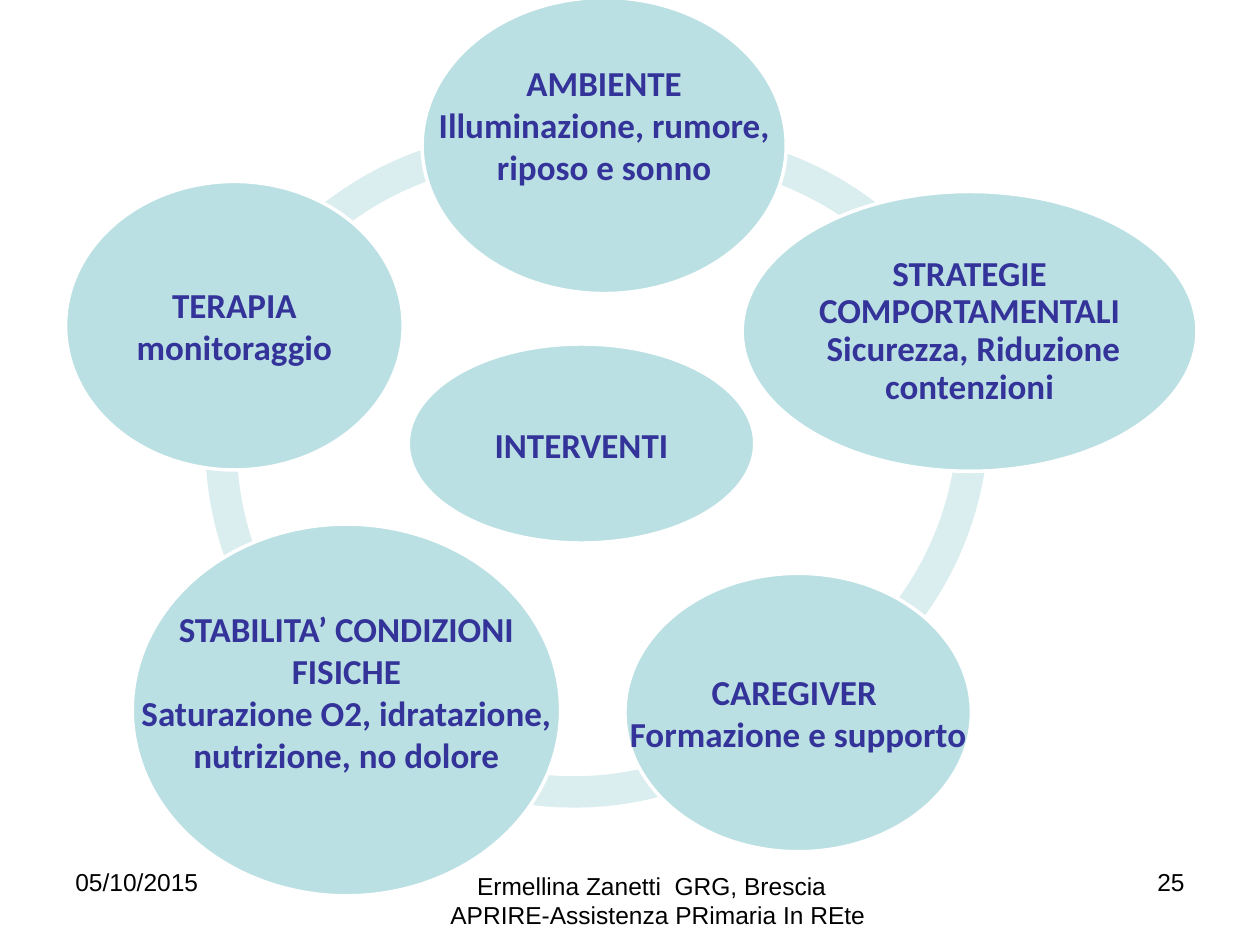
from pptx import Presentation
from pptx.dml.color import RGBColor
from pptx.enum.shapes import MSO_SHAPE
from pptx.enum.text import MSO_ANCHOR, PP_ALIGN
from pptx.util import Inches, Pt

ELLIPSE, BLOCK_ARC = MSO_SHAPE.OVAL, MSO_SHAPE.BLOCK_ARC
LEFT, CENTER, RIGHT = PP_ALIGN.LEFT, PP_ALIGN.CENTER, PP_ALIGN.RIGHT
TOP, MIDDLE = MSO_ANCHOR.TOP, MSO_ANCHOR.MIDDLE

TEAL = RGBColor(0xBB, 0xE0, 0xE3)
PALE_TEAL = RGBColor(0xDA, 0xED, 0xEF)
INDIGO = RGBColor(0x33, 0x33, 0x99)
WHITE = RGBColor(0xFF, 0xFF, 0xFF)
BLACK = RGBColor(0x00, 0x00, 0x00)

RING_SIZE = 5.41
RING_THICKNESS = 0.046
INSET = 0.03

# left, top, start and end angle in degrees, clockwise from the right
RING_ARCS = [
    (1.53, 1.04, 206.0, 282.19),
    (1.63, 0.82, 126.7, 200.76),
    (1.85, 1.00, 47.45, 133.06),
    (2.44, 0.60, 345.22, 63.04),
    (2.60, 1.05, 258.74, 334.8),
]

# box, paragraphs, line spacing, extra top inset, extra bottom inset
TOPICS = [
    ((3.24, 2.73, 2.75, 1.58), ["INTERVENTI"], 0.9, 0.06, 0),
    ((3.35, -0.02, 2.89, 2.35),
     ["AMBIENTE", "Illuminazione, rumore, riposo e sonno"], 1, 0, 0.33),
    ((5.89, 1.52, 3.61, 2.22),
     ["STRATEGIE COMPORTAMENTALI\v Sicurezza, Riduzione contenzioni"], 0.9, 0, 0),
    ((4.96, 4.55, 2.75, 2.21),
     ["CAREGIVER ", "Formazione e supporto"], 1, 0, 0),
    ((1.05, 4.16, 3.40, 2.95),
     ["STABILITA’ CONDIZIONI FISICHE",
      "Saturazione O2, idratazione, nutrizione, no dolore"], 1, 0, 0.3),
    ((0.52, 1.44, 2.68, 2.29), ["TERAPIA", "monitoraggio"], 1, 0, 0),
]

FOOTERS = [
    ((0.5, 6.83, 2.33, 0.52), ["05/10/2015"], LEFT),
    ((3.11, 6.86, 4.18, 0.52),
     ["Ermellina Zanetti  GRG, Brescia ",
      " APRIRE-Assistenza PRimaria In REte"], CENTER),
    ((7.17, 6.83, 2.33, 0.52), ["25"], RIGHT),
]


def add_filled_shape(slide, kind, box, color):
    shape = slide.shapes.add_shape(kind, *map(Inches, box))
    shape.shadow.inherit = False
    shape.fill.solid()
    shape.fill.fore_color.rgb = color
    shape.line.fill.background()
    return shape


def add_ring_arc(slide, left, top, start, end):
    arc = add_filled_shape(
        slide, BLOCK_ARC, (left, top, RING_SIZE, RING_SIZE), PALE_TEAL)
    # Angles are stored in 1/60000 degree, adjustments are scaled by 1/100000
    arc.adjustments[0] = start * 0.6
    arc.adjustments[1] = end * 0.6
    arc.adjustments[2] = RING_THICKNESS


def add_label(slide, box, paragraphs, align, anchor, font_name, size, color,
              bold=False, line_spacing=1):
    frame = slide.shapes.add_textbox(*map(Inches, box)).text_frame
    frame.word_wrap = True
    frame.vertical_anchor = anchor
    frame.text = "\n".join(paragraphs)
    for paragraph in frame.paragraphs:
        paragraph.alignment = align
        paragraph.line_spacing = line_spacing
        for run in paragraph.runs:
            run.font.name = font_name
            run.font.size = Pt(size)
            run.font.bold = bold
            run.font.color.rgb = color
    return frame


def add_topic(slide, box, paragraphs, line_spacing, extra_top, extra_bottom):
    ellipse = add_filled_shape(slide, ELLIPSE, box, TEAL)
    ellipse.line.color.rgb = WHITE
    ellipse.line.width = Pt(2)
    # The label spans the whole ellipse box, wider than the ellipse's own text area
    frame = add_label(slide, box, paragraphs, CENTER, MIDDLE, "Calibri", 20,
                      INDIGO, True, line_spacing)
    frame.margin_left = frame.margin_right = Inches(INSET)
    frame.margin_top = Inches(INSET + extra_top)
    frame.margin_bottom = Inches(INSET + extra_bottom)


def main():
    presentation = Presentation()
    presentation.slide_width = Inches(10)
    presentation.slide_height = Inches(7.5)
    slide = presentation.slides.add_slide(presentation.slide_layouts[6])

    for arc in RING_ARCS:
        add_ring_arc(slide, *arc)
    for topic in TOPICS:
        add_topic(slide, *topic)
    for box, paragraphs, align in FOOTERS:
        add_label(slide, box, paragraphs, align, TOP, "Arial", 14, BLACK)

    presentation.save("out.pptx")


if __name__ == "__main__":
    main()
